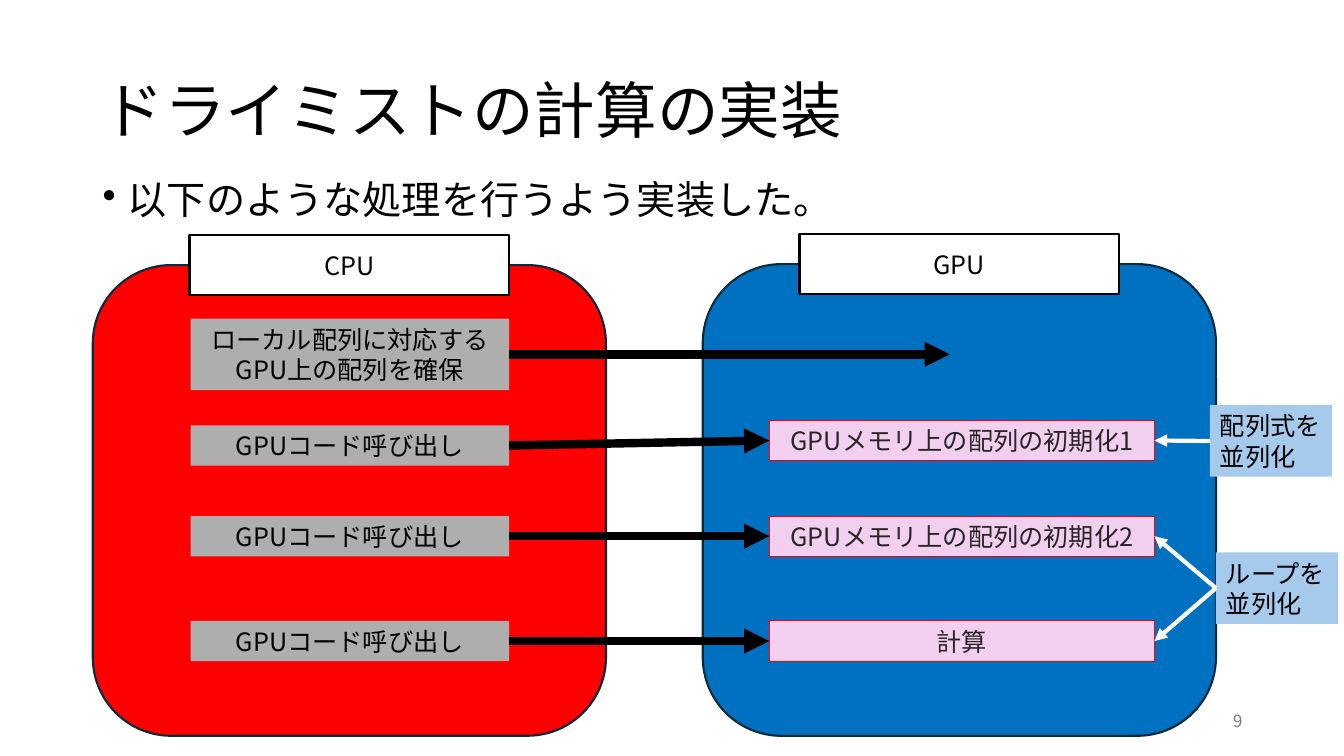
from dataclasses import dataclass

from lxml import etree
from pptx import Presentation
from pptx import util as u
from pptx.dml import color
from pptx.enum import shapes, text
from pptx.oxml import ns

FONT = "Noto Sans CJK JP"
INK = {
    "black": "000000", "white": "FFFFFF", "red": "FF0000", "blue": "0070C0",
    "navy": "092A39", "gray": "AEAEAE", "pink": "F2CFEE", "sky": "A6CAEC",
    "dark": "262626", "page": "797979",
}
LEFT, MID, RIGHT = text.PP_ALIGN.LEFT, text.PP_ALIGN.CENTER, text.PP_ALIGN.RIGHT
RECT = shapes.MSO_SHAPE.RECTANGLE
ROUND = shapes.MSO_SHAPE.ROUNDED_RECTANGLE
WEST, EAST = 1, 3


@dataclass
class Box:
    x: float
    y: float
    w: float
    h: float
    words: str = ""
    fill: str = ""
    line: str = ""
    width: float = 1.5
    size: int = 18
    ink: str = "black"
    align: text.PP_ALIGN = MID
    form: shapes.MSO_SHAPE = RECT


@dataclass
class Step:
    y: float
    call: str
    task: str = ""
    drop: float = 0
    high: float = 0.4


def tint(name: str) -> color.RGBColor:
    return color.RGBColor.from_string(INK[name])


def write(shape, box: Box):
    frame = shape.text_frame
    frame.word_wrap = True
    frame.vertical_anchor = text.MSO_ANCHOR.MIDDLE
    para = frame.paragraphs[0]
    para.text = box.words
    para.alignment = box.align
    para.font.name = FONT
    para.font.size = u.Pt(box.size)
    para.font.color.rgb = tint(box.ink)
    latin = para._p.pPr.find(".//" + ns.qn("a:latin"))
    east = etree.Element(ns.qn("a:ea"), typeface=FONT)
    latin.addnext(east)
    return para


def draw(slide, box: Box):
    area = [u.Inches(n) for n in (box.x, box.y, box.w, box.h)]
    if not box.fill:
        return write(slide.shapes.add_textbox(*area), box)
    shape = slide.shapes.add_shape(box.form, *area)
    shape.shadow.inherit = False
    shape.fill.solid()
    shape.fill.fore_color.rgb = tint(box.fill)
    if box.line:
        shape.line.color.rgb = tint(box.line)
        shape.line.width = u.Pt(box.width)
    else:
        shape.line.fill.background()
    if box.words:
        write(shape, box)
    return shape


def link(slide, start, end, ink: str, width: float, out: int, into: int) -> None:
    line = slide.shapes.add_connector(shapes.MSO_CONNECTOR.STRAIGHT, 0, 0, 0, 0)
    line.begin_connect(start, out)
    if end:
        line.end_connect(end, into)
    else:
        line.end_x, line.end_y = u.Inches(9.42), line.begin_y
    line.line.color.rgb = tint(ink)
    line.line.width = u.Pt(width)
    etree.SubElement(line.line._get_or_add_ln(), ns.qn("a:tailEnd"), type="triangle")
    etree.SubElement(line._element.spPr, ns.qn("a:effectLst"))


def panel(slide, x: float, y: float, name: str, fill: str) -> None:
    draw(slide, Box(x, y, 5.09, 7.3 - y, fill=fill, line="navy", form=ROUND))
    draw(slide, Box(x + 0.96, y - 0.3, 3.17, 0.6, name, "white", "black"))


def bullet(para) -> None:
    props = para._p.get_or_add_pPr()
    props.set("marL", str(u.Inches(0.25)))
    props.set("indent", str(u.Inches(-0.25)))
    mark = etree.Element(ns.qn("a:buChar"), char="•")
    props.find(ns.qn("a:defRPr")).addprevious(mark)


def main() -> None:
    deck = Presentation()
    deck.slide_width, deck.slide_height = u.Inches(13.33), u.Inches(7.5)
    slide = deck.slides.add_slide(deck.slide_layouts[6])

    title = draw(slide, Box(0.92, 0.4, 11.5, 1.45, "ドライミストの計算の実装", size=44, align=LEFT))
    title.line_spacing = 0.9
    draw(slide, Box(9.42, 6.95, 3, 0.4, "9", size=12, ink="page", align=RIGHT))
    panel(slide, 0.92, 2.63, "CPU", "red")
    panel(slide, 6.97, 2.62, "GPU", "blue")

    call = "GPUコード呼び出し"
    steps = [
        Step(3.16, "ローカル配列に対応する\nGPU上の配列を確保", high=0.71),
        Step(4.17, call, "GPUメモリ上の配列の初期化1", drop=0.05),
        Step(5.12, call, "GPUメモリ上の配列の初期化2"),
        Step(6.16, call, "計算"),
    ]
    tasks = []
    for step in steps:
        host = draw(slide, Box(1.89, step.y + step.drop, 3.16, step.high, step.call, "gray"))
        task = None
        if step.task:
            task = draw(slide, Box(7.63, step.y, 3.82, 0.4, step.task, "pink", "red", 0.75, ink="dark"))
            tasks.append(task)
        link(slide, host, task, "black", 6, EAST, WEST)

    lead = draw(slide, Box(0.92, 1.69, 11.5, 0.63, "以下のような処理を行うよう実装した。", size=28, align=LEFT))
    lead.line_spacing = 0.9
    bullet(lead)

    notes = [
        (Box(12, 4.02, 1.21, 0.71, "配列式を\n並列化", "sky", align=LEFT), tasks[:1]),
        (Box(12.06, 5.48, 1.21, 0.71, "ループを\n並列化", "sky", align=LEFT), tasks[1:]),
    ]
    for box, ends in notes:
        note = draw(slide, box)
        for end in ends:
            link(slide, note, end, "white", 3, WEST, EAST)

    deck.save("out.pptx")


if __name__ == "__main__":
    main()
